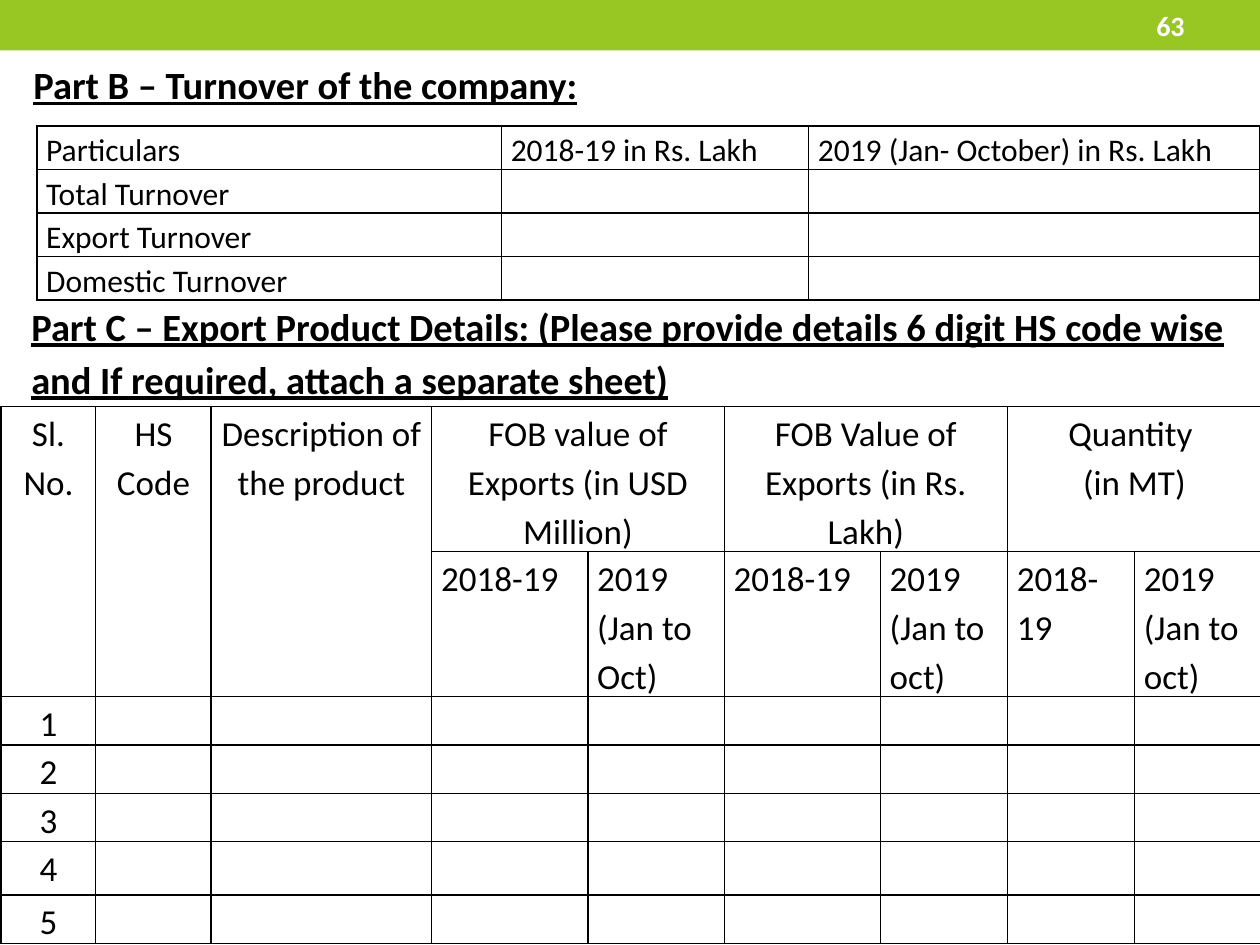
from lxml import etree
from pptx import Presentation
from pptx import util as u
from pptx.dml.color import RGBColor
from pptx.enum import shapes, text
from pptx.oxml.ns import qn

COLOURS = {"band": "98C723", "ink": "000000", "paper": "FFFFFF"}
HEADING = {"size": u.Pt(22), "bold": True, "underline": True}
LEFT, CENTRE, RIGHT = text.PP_ALIGN.LEFT, text.PP_ALIGN.CENTER, text.PP_ALIGN.RIGHT


class FormSlide:
    font_name = "Calibri"
    line_spacing = 1.15

    def __init__(self, slide):
        self.slide = slide

    def colour(self, key):
        return RGBColor.from_string(COLOURS[key])

    def set_words(self, frame, words, font, colour="ink", **paragraph_format):
        frame.text = words
        for paragraph in frame.paragraphs:
            for key, value in paragraph_format.items():
                setattr(paragraph, key, value)
            for run in paragraph.runs:
                for key, value in {"name": self.font_name, **font}.items():
                    setattr(run.font, key, value)
                run.font.color.rgb = self.colour(colour)

    def band(self, left, top, width, height):
        bar = self.slide.shapes.add_shape(
            shapes.MSO_SHAPE.RECTANGLE, *map(u.Pt, (left, top, width, height)))
        bar.shadow.inherit = False
        bar.fill.solid()
        bar.fill.fore_color.rgb = self.colour("band")
        bar.line.fill.background()

    def textbox(self, left, top, width, height, words, font, colour="ink",
                frame_format=None, **paragraph_format):
        box = self.slide.shapes.add_textbox(*map(u.Pt, (left, top, width, height)))
        for key, value in {"word_wrap": True, **(frame_format or {})}.items():
            setattr(box.text_frame, key, value)
        self.set_words(box.text_frame, words, font, colour, **paragraph_format)

    def heading(self, left, top, width, height, words):
        self.textbox(left, top, width, height, words, HEADING,
                     frame_format={"auto_size": text.MSO_AUTO_SIZE.SHAPE_TO_FIT_TEXT},
                     line_spacing=self.line_spacing, space_after=u.Pt(10))

    def border(self, cell):
        properties = cell._tc.get_or_add_tcPr()
        for position, side in enumerate(("lnL", "lnR", "lnT", "lnB")):
            line = etree.Element(qn(f"a:{side}"), w=str(u.Pt(1)))
            fill = etree.SubElement(line, qn("a:solidFill"))
            etree.SubElement(fill, qn("a:srgbClr"), val=COLOURS["ink"])
            properties.insert(position, line)

    def table(self, left, top, widths, heights, rows, size, centred=lambda r, c: False):
        grid = self.slide.shapes.add_table(
            len(heights), len(widths),
            *map(u.Pt, (left, top, sum(widths), sum(heights)))).table
        grid.first_row = grid.horz_banding = False
        for column, width in zip(grid.columns, widths):
            column.width = u.Pt(width)
        for row, height in zip(grid.rows, heights):
            row.height = u.Pt(height)
        cell_format = {"margin_left": u.Pt(5.4), "margin_right": u.Pt(5.4),
                       "margin_top": 0, "margin_bottom": 0}
        for r, row in enumerate(rows):
            for c in range(len(widths)):
                cell = grid.cell(r, c)
                for key, value in cell_format.items():
                    setattr(cell, key, value)
                cell.fill.background()
                self.border(cell)
                if c < len(row) and row[c]:
                    self.set_words(cell.text_frame, row[c], {"size": u.Pt(size)},
                                   alignment=CENTRE if centred(r, c) else LEFT,
                                   line_spacing=self.line_spacing)
        return grid


def main():
    deck = Presentation()
    deck.slide_width, deck.slide_height = u.Pt(720), u.Pt(540)
    form = FormSlide(deck.slides.add_slide(deck.slide_layouts[6]))

    # Top band with page number
    form.band(0, 0, 720, 28.8)
    form.textbox(600, 1.4, 84, 26, "63", {"size": u.Pt(16), "bold": True}, "paper",
                 {"vertical_anchor": text.MSO_ANCHOR.MIDDLE}, alignment=RIGHT)

    # Part B: turnover
    form.heading(12, 27.4, 348, 36, "Part B – Turnover of the company:")
    turnover = [["Particulars", "2018-19 in Rs. Lakh", "2019 (Jan- October) in Rs. Lakh"],
                ["Total Turnover"], ["Export Turnover"], ["Domestic Turnover"]]
    form.table(21, 72, [265.5, 175.5, 258], [24.8] * 4, turnover, 18)

    # Part C: export products
    form.heading(10.8, 165.6, 699, 67,
                 "Part C – Export Product Details: (Please provide details 6 digit HS code "
                 "wise and If required, attach a separate sheet)")
    products = [
        ["Sl. No.", "HS Code", "Description of the product",
         "FOB value of Exports (in USD Million)", "",
         "FOB Value of Exports (in Rs. Lakh)", "", "Quantity \n(in MT)"],
        ["", "", "", "2018-19", "2019 (Jan to Oct)", "2018-19", "2019 (Jan to oct)",
         "2018-19", "2019 (Jan to oct)"],
        *([str(number)] for number in range(1, 6))]
    export_table = form.table(
        0.7, 232.3, [54, 66, 126, 89.2, 78, 89.2, 72.6, 72.6, 72.6],
        [82.9, 82.9, 27.6, 27.6, 27.6, 30.4, 27.6], products, 20,
        centred=lambda r, c: r == 0 or c == 0)

    # Merged header cells: tall labels, then year pairs
    for column in range(3):
        export_table.cell(0, column).merge(export_table.cell(1, column))
    for column in (3, 5, 7):
        export_table.cell(0, column).merge(export_table.cell(0, column + 1))

    deck.save("out.pptx")


if __name__ == "__main__":
    main()
